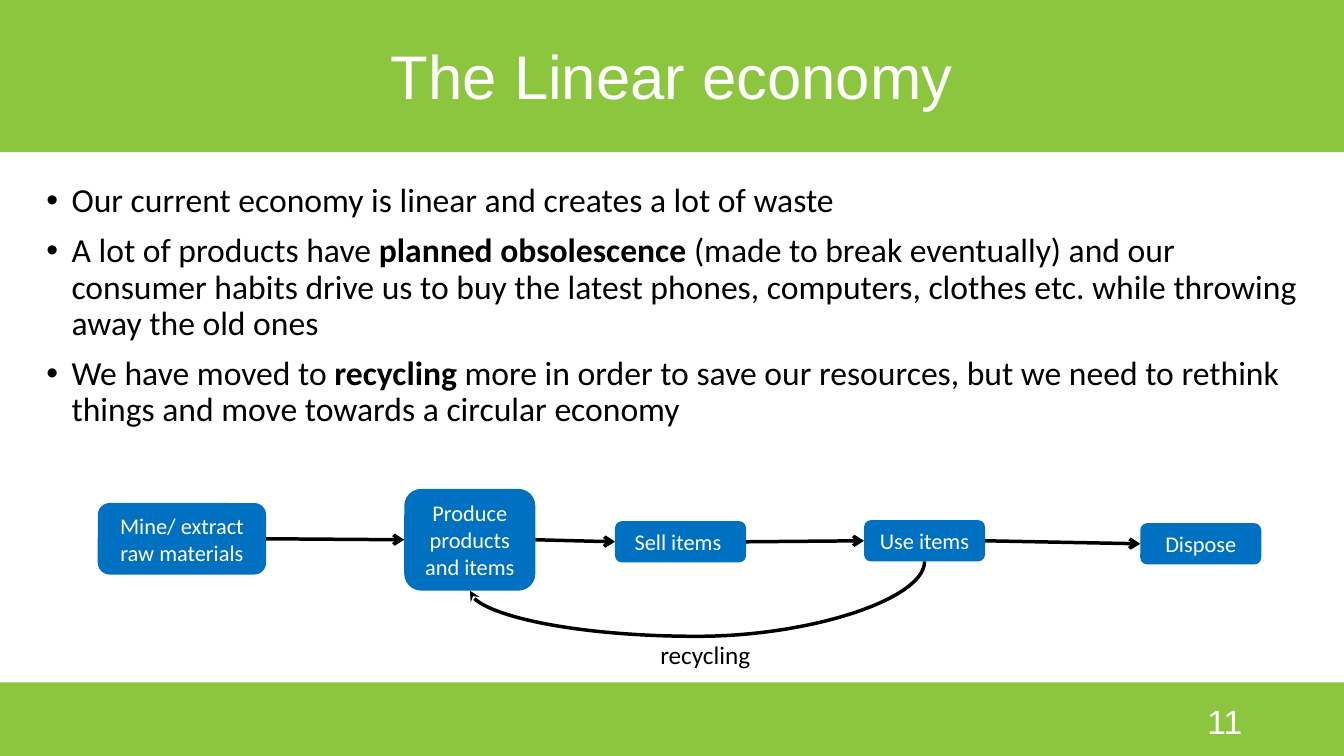
from lxml.etree import SubElement
from pptx import Presentation
from pptx.dml.color import RGBColor
from pptx.enum.shapes import MSO_CONNECTOR, MSO_SHAPE
from pptx.enum.text import MSO_ANCHOR, MSO_AUTO_SIZE, PP_ALIGN
from pptx.oxml.ns import qn
from pptx.util import Pt

SCALE = 9144  # EMU per px, 100 px to the inch
PAGE_WIDTH, PAGE_HEIGHT = 1333, 750
GREEN = RGBColor(0x8C, 0xC6, 0x3F)
BLUE = RGBColor(0x00, 0x70, 0xC0)
WHITE = RGBColor(0xFF, 0xFF, 0xFF)
BLACK = RGBColor(0x00, 0x00, 0x00)

# Content: bullets are lists of (text, bold); lengths are left, top, width, height
TITLE = "The Linear economy"
BULLETS = [
    [("Our current economy is linear and creates a lot of waste", False)],
    [("A lot of products have ", False), ("planned obsolescence ", True),
     ("(made to break eventually) and our consumer habits drive us to buy the latest "
      "phones, computers, clothes etc. while throwing away the old ones", False)],
    [("We have moved to ", False), ("recycling", True),
     (" more in order to save our resources, but we need to rethink things "
      "and move towards a circular economy", False)],
]
STEPS = [
    ("Mine/ extract raw materials", (97, 499, 167, 71)),
    ("Produce products and items", (401, 485, 130, 101)),
    ("Sell items ", (610, 517, 130, 41)),
    ("Use items", (857, 516, 120, 41)),
    ("Dispose", (1131, 519, 120, 41)),
]
BANDS = [(0, 0, PAGE_WIDTH, 151), (0, 677, PAGE_WIDTH, 73)]
TITLE_FRAME = (0, 6, PAGE_WIDTH, 145)
BODY_FRAME = (36, 177, 1261, 277)
NUMBER_FRAME = (942, 695, 300, 40)
LABEL_FRAME = (645, 629, 111, 40)
LOOP_BEND = 256000  # depth of the loop, in 1/1000 % of its height


def emu(frame):
    return [length * SCALE for length in frame]


def place(box, frame):
    box.left, box.top, box.width, box.height = emu(frame)


def add_span(para, text, size, color, font="Calibri", bold=False):
    span = para.add_run()
    span.text = text
    span.font.name, span.font.size, span.font.bold = font, Pt(size), bold
    span.font.color.rgb = color


def add_block(shape, frame, color):
    block = page.shapes.add_shape(shape, *emu(frame))
    block.shadow.inherit = False
    block.fill.solid()
    block.fill.fore_color.rgb = color
    block.line.fill.background()
    return block


def style_arrow(arrow, head):
    arrow.line.color.rgb = BLACK
    arrow.line.width = Pt(2.5)
    SubElement(arrow.line._get_or_add_ln(), qn("a:tailEnd"), type=head)
    SubElement(arrow._element.spPr, qn("a:effectLst"))


deck = Presentation()
deck.slide_width, deck.slide_height = emu((PAGE_WIDTH, PAGE_HEIGHT))
page = deck.slides.add_slide(deck.slide_layouts[1])
title, body = page.placeholders

# Green bands, behind the text
for frame in BANDS:
    band = add_block(MSO_SHAPE.RECTANGLE, frame, GREEN)
    page.shapes._spTree.insert(2, band._element)

# Title
place(title, TITLE_FRAME)
title.text_frame.vertical_anchor = MSO_ANCHOR.MIDDLE
title.text_frame.auto_size = MSO_AUTO_SIZE.NONE
para = title.text_frame.paragraphs[0]
para.alignment = PP_ALIGN.CENTER
para.line_spacing = 0.9
add_span(para, TITLE, 44, WHITE, "Arial")

# Bullet list
place(body, BODY_FRAME)
body.text_frame.auto_size = MSO_AUTO_SIZE.NONE
for index, spans in enumerate(BULLETS):
    para = body.text_frame.paragraphs[0] if index == 0 else body.text_frame.add_paragraph()
    para.line_spacing = 0.9
    para.space_before = Pt(10 if index else 0)
    properties = para._p.get_or_add_pPr()
    properties.set("marL", str(25 * SCALE))
    properties.set("indent", str(-25 * SCALE))
    SubElement(properties, qn("a:buFont"), typeface="Arial")
    SubElement(properties, qn("a:buChar"), char="•")
    for text, bold in spans:
        add_span(para, text, 24, BLACK, bold=bold)

# Steps of the economy
boxes = []
for text, frame in STEPS:
    box = add_block(MSO_SHAPE.ROUNDED_RECTANGLE, frame, BLUE)
    box.text_frame.word_wrap = True
    box.text_frame.auto_size = MSO_AUTO_SIZE.SHAPE_TO_FIT_TEXT
    box.text_frame.vertical_anchor = MSO_ANCHOR.MIDDLE
    para = box.text_frame.paragraphs[0]
    para.alignment = PP_ALIGN.CENTER
    add_span(para, text, 16, WHITE)
    boxes.append(box)

# Arrows from each step to the next
for before, after in zip(boxes, boxes[1:]):
    arrow = page.shapes.add_connector(MSO_CONNECTOR.STRAIGHT, 0, 0, 0, 0)
    arrow.begin_connect(before, 3)
    arrow.end_connect(after, 1)
    style_arrow(arrow, "arrow")

# Recycling loop: a curve turned a quarter, from under "Use" back to under "Produce"
produce, use = boxes[1], boxes[3]
start_x, start_y = use.left + use.width // 2, use.top + use.height
end_x, end_y = produce.left + produce.width // 2, produce.top + produce.height
span_x, span_y = start_x - end_x, end_y - start_y
left = (start_x + end_x - span_y) // 2
top = (start_y + end_y - span_x) // 2
loop = page.shapes.add_connector(MSO_CONNECTOR.CURVE, left, top, left + span_y, top + span_x)
loop._element.spPr.find(qn("a:xfrm")).set("rot", str(90 * 60000))
guides = loop._element.spPr.find(qn("a:prstGeom")).find(qn("a:avLst"))
SubElement(guides, qn("a:gd"), name="adj1", fmla=f"val {LOOP_BEND}")
style_arrow(loop, "stealth")

# Loop label
label = page.shapes.add_textbox(*emu(LABEL_FRAME))
label.text_frame.word_wrap = False
label.text_frame.auto_size = MSO_AUTO_SIZE.SHAPE_TO_FIT_TEXT
add_span(label.text_frame.paragraphs[0], "recycling", 18, BLACK)

# Page number
number = page.shapes.add_textbox(*emu(NUMBER_FRAME))
number.text_frame.word_wrap = True
number.text_frame.vertical_anchor = MSO_ANCHOR.MIDDLE
para = number.text_frame.paragraphs[0]
para.alignment = PP_ALIGN.RIGHT
add_span(para, "11", 24, WHITE, "Arial")

deck.save("out.pptx")
